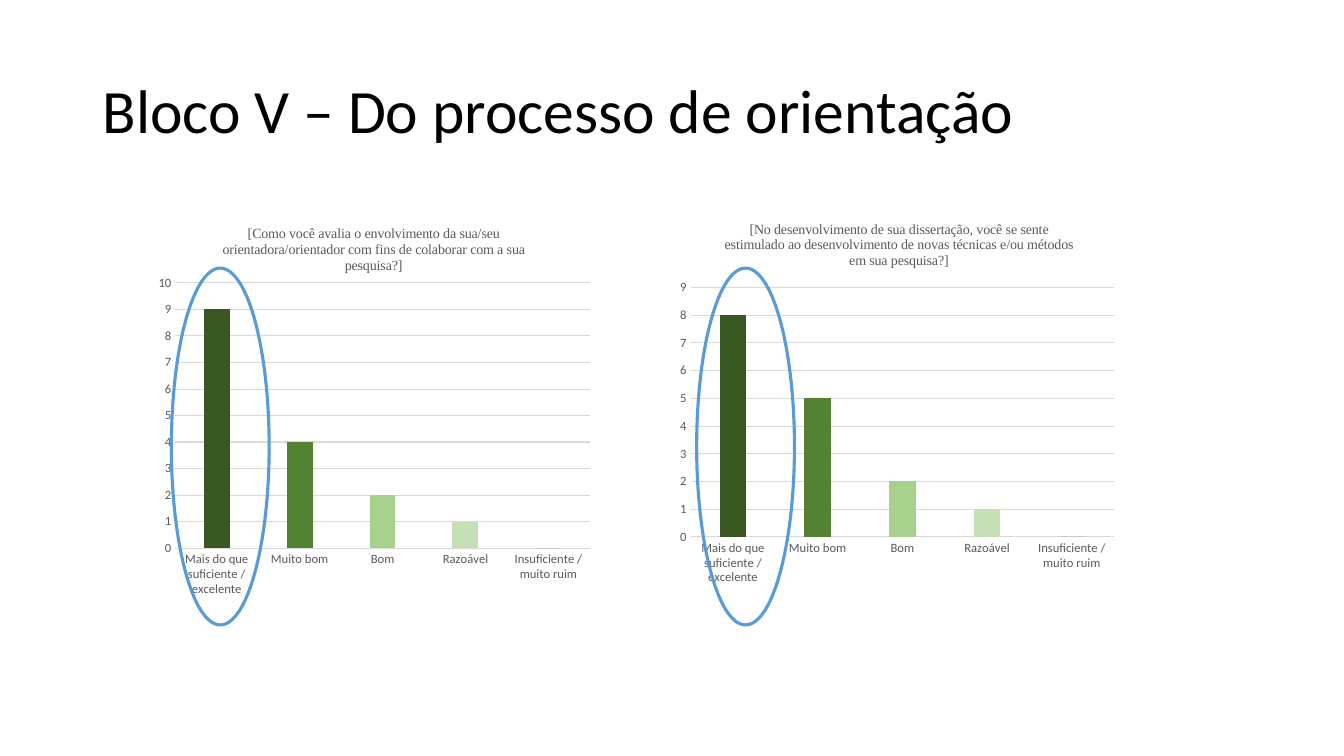
from lxml import etree
from pptx import Presentation
from pptx.chart.data import CategoryChartData
from pptx.dml.color import RGBColor
from pptx.enum.chart import XL_CHART_TYPE, XL_TICK_MARK
from pptx.enum.shapes import MSO_SHAPE
from pptx.enum.text import MSO_ANCHOR
from pptx.oxml.ns import qn
from pptx.util import Inches, Pt

COLUMNS = XL_CHART_TYPE.COLUMN_CLUSTERED
NO_TICK = XL_TICK_MARK.NONE
OVAL = MSO_SHAPE.OVAL
MIDDLE = MSO_ANCHOR.MIDDLE

BODY_FONT, QUESTION_FONT = "Calibri", "Times New Roman"
BLACK, GREY, GRID, RING = "000000", "595959", "D9D9D9", "5B9BD5"
GREENS = ["385723", "548235", "A9D18E", "C5E0B4"]
RATINGS = ["Mais do que suficiente / excelente", "Muito bom", "Bom",
           "Razoável", "Insuficiente / muito ruim"]
CHART_W, CHART_H = 4.47, 3.87
RING_TOP, RING_W, RING_H = 2.66, 0.97, 3.54

# Plot and title layouts are shares of the chart's box
SURVEY = [
    dict(question="[Como você avalia o envolvimento da sua/seu "
                  "orientadora/orientador com fins de colaborar com a sua pesquisa?]",
         answers=[9, 4, 2, 1, 0], top_value=10, left=1.47, top=2.15,
         plot=dict(x=0.06, y=0.17, w=0.92, h=0.68), title_at=None, ring_left=1.7),
    dict(question="[No desenvolvimento de sua dissertação, você se sente estimulado "
                  "ao desenvolvimento de novas técnicas e/ou métodos em sua pesquisa?]",
         answers=[8, 5, 2, 1, 0], top_value=9, left=6.67, top=2,
         plot=dict(x=0.04, y=0.22, w=0.94, h=0.64),
         title_at=dict(x=0.11, y=0.04), ring_left=6.91),
]


def color(hex_code):
    return RGBColor.from_string(hex_code)


def format_font(font, size, hex_code, name=BODY_FONT):
    font.size, font.name, font.bold = Pt(size), name, False
    font.color.rgb = color(hex_code)


def write(frame, text, **style):
    paragraph = frame.paragraphs[0]
    run = paragraph.add_run()
    run.text = text
    format_font(run.font, **style)
    return paragraph


def set_layout(parent, before, shares, inner=False):
    """Place a chart part by shares of the chart's box."""
    for old in parent.findall(qn("c:layout")):
        parent.remove(old)
    layout = etree.Element(qn("c:layout"))
    manual = etree.SubElement(layout, qn("c:manualLayout"))
    settings = [("layoutTarget", "inner")] if inner else []
    settings += [("xMode", "edge"), ("yMode", "edge")]
    settings += list(shares.items())
    for tag, value in settings:
        etree.SubElement(manual, qn("c:" + tag)).set("val", str(value))
    parent.find(qn(before)).addprevious(layout)


def add_heading(slide, text, left, top, width, height):
    box = slide.shapes.add_textbox(*map(Inches, (left, top, width, height)))
    frame = box.text_frame
    frame.word_wrap = True
    frame.vertical_anchor = MIDDLE
    write(frame, text, size=44, hex_code=BLACK).line_spacing = 0.9


def style_axes(chart, top_value):
    ratings, counts = chart.category_axis, chart.value_axis
    for axis in (ratings, counts):
        axis.major_tick_mark = axis.minor_tick_mark = NO_TICK
        format_font(axis.tick_labels.font, 9, GREY)
    counts.minimum_scale, counts.maximum_scale, counts.major_unit = 0, top_value, 1
    counts.format.line.fill.background()
    for line in (ratings.format.line, counts.major_gridlines.format.line):
        line.color.rgb = color(GRID)
        line.width = Pt(0.75)


def add_answers(slide, question, answers, top_value, left, top, plot, title_at):
    data = CategoryChartData()
    data.categories = RATINGS
    data.add_series(question, answers)
    box = map(Inches, (left, top, CHART_W, CHART_H))
    chart = slide.shapes.add_chart(COLUMNS, *box, data).chart
    chart.has_legend = False
    format_font(chart.font, 10, BLACK)
    write(chart.chart_title.text_frame, question,
          size=10, hex_code=GREY, name=QUESTION_FONT)
    chart.chart_title.include_in_layout = False
    style_axes(chart, top_value)

    # Columns, darkest for the best rating
    columns = chart.plots[0]
    columns.gap_width, columns.overlap, columns.vary_by_categories = 219, -27, False
    series = columns.series[0]
    series.format.fill.solid()
    series.format.fill.fore_color.rgb = color("4472C4")
    for index, green in enumerate(GREENS):
        fill = series.points[index].format.fill
        fill.solid()
        fill.fore_color.rgb = color(green)

    # Positions inside the chart
    plot_area = chart.element.find(".//" + qn("c:plotArea"))
    set_layout(plot_area, "c:barChart", plot, inner=True)
    if title_at:
        title = chart.element.find(".//" + qn("c:title"))
        set_layout(title, "c:overlay", title_at)


def add_ring(slide, left):
    ring = slide.shapes.add_shape(
        OVAL, *map(Inches, (left, RING_TOP, RING_W, RING_H)))
    ring.shadow.inherit = False
    ring.fill.background()
    ring.line.color.rgb = color(RING)
    ring.line.width = Pt(2.25)


def main():
    deck = Presentation()
    deck.slide_width, deck.slide_height = Inches(13.33), Inches(7.5)
    slide = deck.slides.add_slide(deck.slide_layouts[6])
    add_heading(slide, "Bloco V – Do processo de orientação", 0.92, 0.4, 11.5, 1.45)
    for item in SURVEY:
        add_answers(slide, **{key: value for key, value in item.items()
                              if key != "ring_left"})
    # Rings around the best rating, in front of both charts
    for item in reversed(SURVEY):
        add_ring(slide, item["ring_left"])
    deck.save("out.pptx")


if __name__ == "__main__":
    main()
